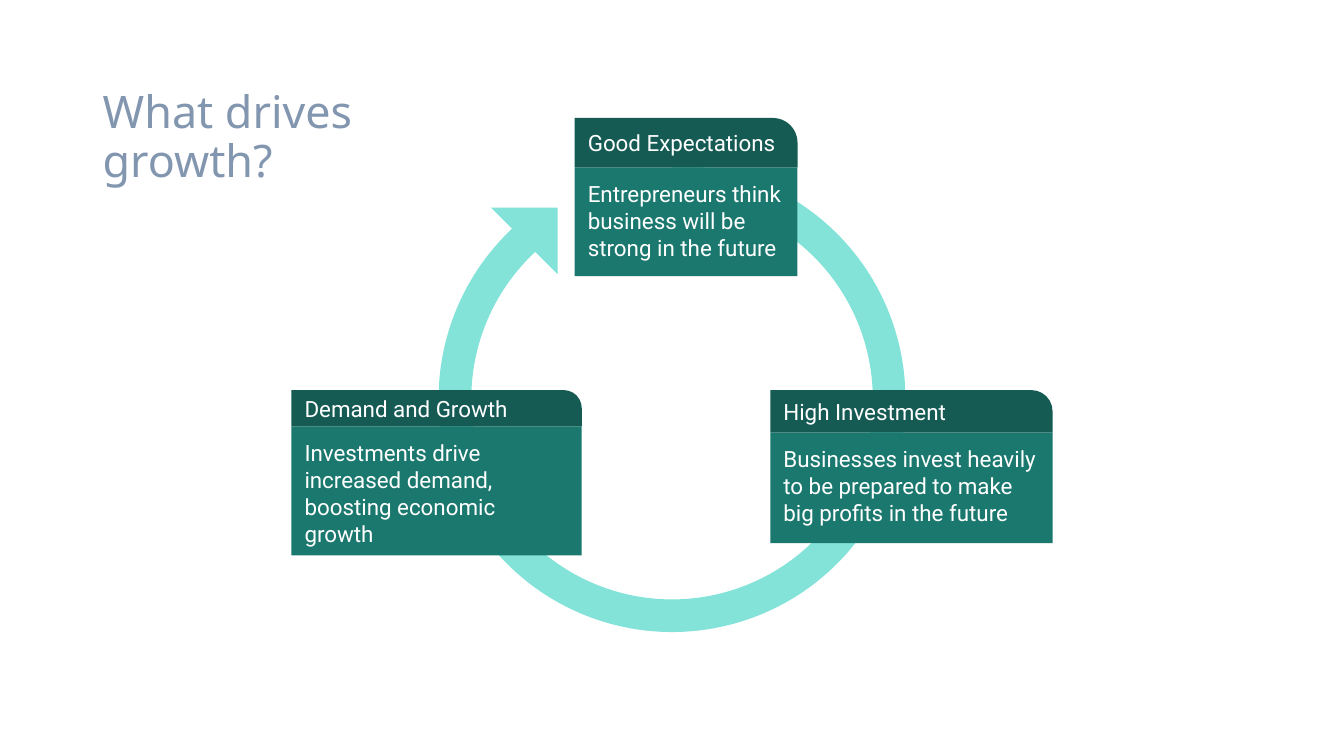
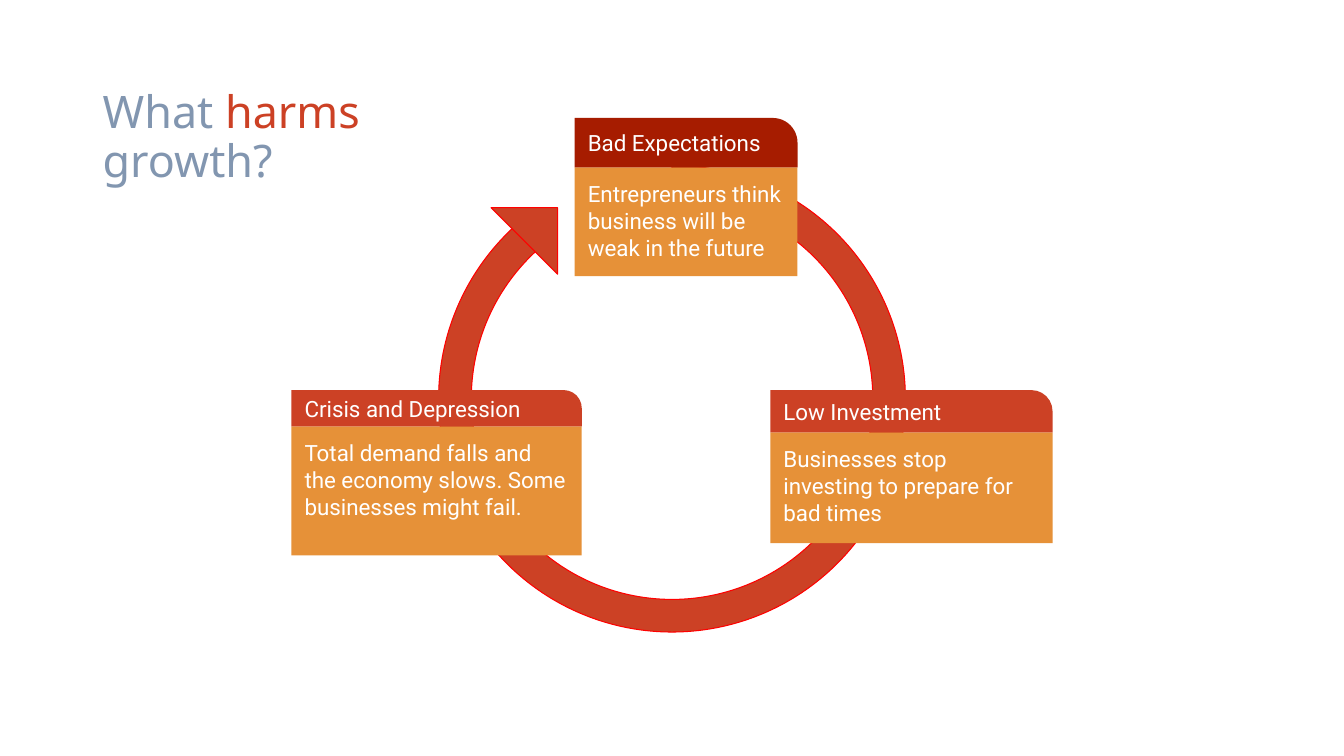
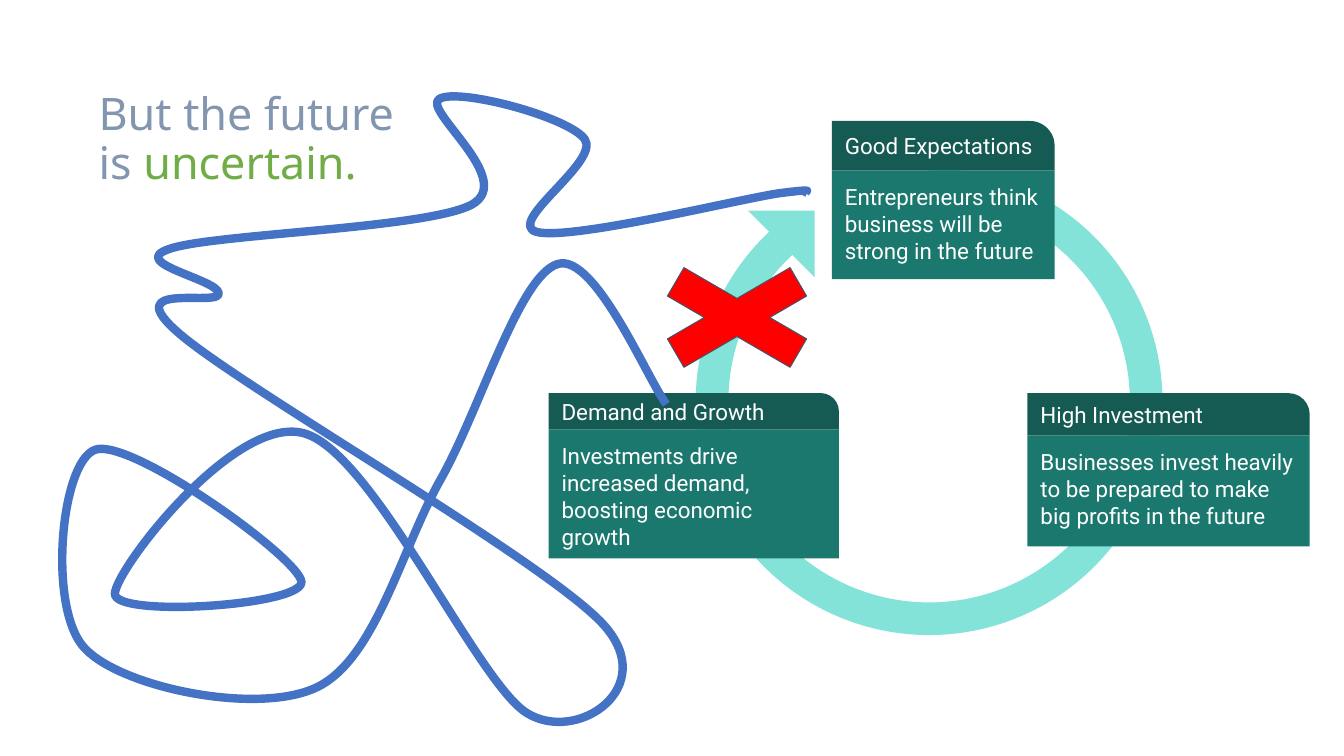
from lxml import etree
from pptx import Presentation
from pptx.dml.color import RGBColor
from pptx.enum.shapes import MSO_SHAPE
from pptx.enum.text import MSO_ANCHOR, PP_ALIGN
from pptx.oxml.ns import qn
from pptx.util import Inches, Pt

COLORS = {
    "title": "8296B0", "white": "FFFFFF",
    "mint": "83E3D9", "teal": "1B786E", "dark_teal": "155B54",
    "brick": "CC4125", "dark_red": "A61C00", "orange": "E69138",
    "red": "FF0000", "green": "70AD47", "blue": "4472C4", "slate": "44546A",
}
TITLE_FONT, CARD_FONT = "Noto Sans", "Roboto"

# Cards: left, top, width, header height, body height
CARD_PLACES = [
    (7.64, 3.87, 2.8, 0.42, 1.1),
    (5.7, 1.17, 2.21, 0.49, 1.08),
    (2.89, 3.87, 2.88, 0.36, 1.28),
]

GROWTH = {
    "ring": "mint", "ring_line": None, "body": "teal",
    "headers": ["dark_teal"] * 3,
    "cards": [
        ("High Investment", "Businesses invest heavily to be prepared to make big profits in the future"),
        ("Good Expectations", "Entrepreneurs think business will be strong in the future"),
        ("Demand and Growth", "Investments drive increased demand, boosting economic growth"),
    ],
}
DECLINE = {
    "ring": "brick", "ring_line": "red", "body": "orange",
    "headers": ["brick", "dark_red", "brick"],
    "cards": [
        ("Low Investment", "Businesses stop investing to prepare for bad times"),
        ("Bad Expectations", "Entrepreneurs think business will be weak in the future"),
        ("Crisis and Depression", "Total demand falls and the economy slows. Some businesses might fail."),
    ],
}

# Slides: title place, title paragraphs as (text, colour) runs, cycle, cycle offset
SLIDES = [
    ((0.92, 0.5, 4.3, 1.75), [[("What drives growth?", "title")]], GROWTH, (0, 0)),
    ((0.92, 0.5, 4.3, 1.75),
     [[("What ", "title"), ("harms", "brick")], [("growth?", "title")]], DECLINE, (0, 0)),
    ((0.88, 0.52, 3.33, 1.75),
     [[("But the future is ", "title"), ("uncertain.", "green")]], GROWTH, (2.55, 0.03)),
]


def add_filled(shapes, kind, place, fill, line=None, adjustments=()):
    shape = shapes.add_shape(kind, *[Inches(length) for length in place])
    shape.shadow.inherit = False
    shape.fill.solid()
    shape.fill.fore_color.rgb = RGBColor.from_string(COLORS[fill])
    if line:
        shape.line.color.rgb = RGBColor.from_string(COLORS[line])
        shape.line.width = Pt(0.75)
    else:
        shape.line.fill.background()
    for index, value in enumerate(adjustments):
        shape.adjustments[index] = value
    return shape


def write_card_text(shape, text, anchor):
    frame = shape.text_frame
    frame.word_wrap = True
    frame.vertical_anchor = anchor
    frame.margin_left = frame.margin_top = frame.margin_bottom = Inches(0.13)
    frame.margin_right = Inches(0.14)
    frame.text = text
    paragraph = frame.paragraphs[0]
    paragraph.alignment = PP_ALIGN.LEFT
    font = paragraph.runs[0].font
    font.name, font.size = CARD_FONT, Pt(16)
    font.color.rgb = RGBColor.from_string(COLORS["white"])


presentation = Presentation()
presentation.slide_width, presentation.slide_height = Inches(13.33), Inches(7.5)

for title_place, title_paragraphs, cycle, (shift_x, shift_y) in SLIDES:
    slide = presentation.slides.add_slide(presentation.slide_layouts[6])

    # Title
    title = slide.shapes.add_textbox(*[Inches(length) for length in title_place])
    frame = title.text_frame
    frame.word_wrap = True
    frame.vertical_anchor = MSO_ANCHOR.MIDDLE
    for index, runs in enumerate(title_paragraphs):
        paragraph = frame.add_paragraph() if index else frame.paragraphs[0]
        paragraph.line_spacing = 0.9
        for text, color in runs:
            run = paragraph.add_run()
            run.text = text
            run.font.name, run.font.size = TITLE_FONT, Pt(32)
            run.font.color.rgb = RGBColor.from_string(COLORS[color])

    # Circular arrow
    ring = slide.shapes.add_group_shape()
    arc = add_filled(ring.shapes, MSO_SHAPE.BLOCK_ARC,
                     (4.35 + shift_x, 1.64 + shift_y, 4.63, 4.63),
                     cycle["ring"], cycle["ring_line"], (54, 30.13, 0.07))
    head = add_filled(ring.shapes, MSO_SHAPE.RIGHT_TRIANGLE,
                      (4.87 + shift_x, 2.06 + shift_y, 0.66, 0.66),
                      cycle["ring"], cycle["ring_line"])
    arc.rotation = head.rotation = 180

    # Cards
    for place, header_color, (heading, text) in zip(CARD_PLACES, cycle["headers"], cycle["cards"]):
        left, top, width, header_height, body_height = place
        left, top = left + shift_x, top + shift_y
        card = slide.shapes.add_group_shape()
        body = add_filled(card.shapes, MSO_SHAPE.RECTANGLE,
                          (left, top + header_height, width, body_height), cycle["body"])
        write_card_text(body, text, MSO_ANCHOR.TOP)
        header = add_filled(card.shapes, MSO_SHAPE.ROUND_1_RECTANGLE,
                            (left, top, width, header_height), header_color, adjustments=(0.5,))
        write_card_text(header, heading, MSO_ANCHOR.MIDDLE)

# Winding path on the last slide: two control points and an end point per curve
PATH_PLACE = (0.61, 0.95, 7.4, 6.22)
PATH_START = (6.61, 4.01)
PATH_CURVES = [
    ((6.43, 3.78), (5.9, 2.5), (5.53, 2.62)),
    ((5.15, 2.74), (4.77, 4.04), (4.38, 4.74)),
    ((3.98, 5.44), (3.73, 6.54), (3.14, 6.82)),
    ((2.55, 7.1), (1.2, 6.82), (0.84, 6.43)),
    ((0.47, 6.04), (0.6, 4.57), (0.95, 4.46)),
    ((1.31, 4.35), (2.96, 5.53), (2.99, 5.77)),
    ((3.02, 6.01), (1.13, 6.13), (1.14, 5.89)),
    ((1.15, 5.64), (2.34, 4.1), (3.02, 4.3)),
    ((3.7, 4.49), (4.73, 6.76), (5.22, 7.07)),
    ((5.72, 7.39), (6.56, 6.82), (5.98, 6.19)),
    ((5.41, 5.57), (2.42, 3.86), (1.78, 3.31)),
    ((1.15, 2.77), (2.19, 3.05), (2.17, 2.91)),
    ((2.16, 2.77), (1.26, 2.61), (1.68, 2.47)),
    ((2.1, 2.32), (4.23, 2.27), (4.68, 2.03)),
    ((5.13, 1.78), (4.17, 1.08), (4.36, 0.98)),
    ((4.55, 0.87), (5.64, 1.16), (5.8, 1.38)),
    ((5.96, 1.6), (5.01, 2.21), (5.32, 2.3)),
    ((5.64, 2.39), (7.27, 1.99), (7.71, 1.92)),
    ((8.16, 1.86), (7.95, 1.91), (8, 1.91)),
]
builder = slide.shapes.build_freeform(*[Inches(length) for length in PATH_START])
builder.add_line_segments([(Inches(x), Inches(y)) for *_, (x, y) in PATH_CURVES], close=False)
winding_path = builder.convert_to_shape()
winding_path.left, winding_path.top, winding_path.width, winding_path.height = [
    Inches(length) for length in PATH_PLACE]
winding_path.shadow.inherit = False
winding_path.fill.background()
winding_path.line.color.rgb = RGBColor.from_string(COLORS["blue"])
winding_path.line.width = Pt(6)

# Bend its straight segments into Bézier curves
outline = next(winding_path.element.iter(qn("a:path")))
for segment in list(outline):
    outline.remove(segment)
outline.set("w", str(winding_path.width))
outline.set("h", str(winding_path.height))
for tag, points in [("a:moveTo", (PATH_START,))] + [("a:cubicBezTo", curve) for curve in PATH_CURVES]:
    segment = etree.SubElement(outline, qn(tag))
    for x, y in points:
        etree.SubElement(segment, qn("a:pt"), x=str(Inches(x) - winding_path.left),
                         y=str(Inches(y) - winding_path.top))

# Cross over the arrow
add_filled(slide.shapes, MSO_SHAPE.MATH_MULTIPLY, (6.14, 2.47, 2.34, 1.36),
           "red", "slate", (0.24,))

presentation.save("out.pptx")
